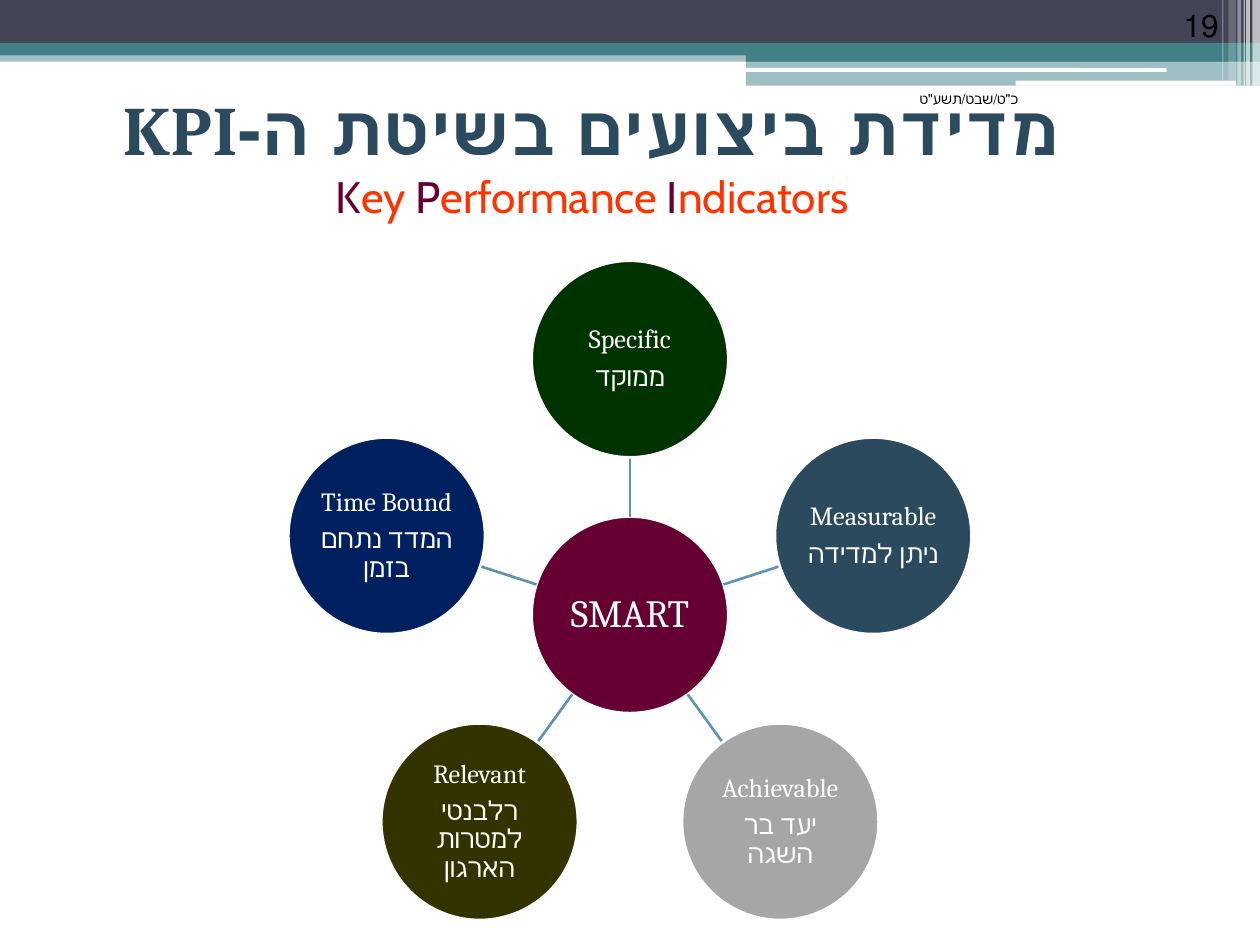
from dataclasses import dataclass
from math import cos, radians, sin

from lxml.etree import SubElement
from pptx import Presentation
from pptx.dml.color import RGBColor
from pptx.enum.shapes import MSO_CONNECTOR, MSO_SHAPE
from pptx.enum.text import MSO_ANCHOR, PP_ALIGN
from pptx.oxml.ns import qn
from pptx.util import Inches, Pt


@dataclass(frozen=True)
class Theme:
    dark: str = "424456"
    teal: str = "438086"
    white: str = "FFFFFF"
    black: str = "000000"
    slate: str = "2B4A5E"
    wine: str = "660033"
    red: str = "FF3300"
    spoke: str = "5C92B5"
    serif: str = "Cambria"
    sans: str = "Cabin"
    plain: str = "Arial"
    head: float = 39.6
    sub: float = 25.2
    hub: float = 22
    node: float = 15
    page: float = 18
    date: float = 8


T = Theme()

# left, top, width, height, colour, opacity in percent
BARS = [
    (0, 0.4, 10, 0.09, T.teal, 50),
    (0, 0, 10, 0.34, T.dark, 100),
    (0, 0.34, 10, 0.1, T.teal, 100),
    (5.92, 0.39, 4.08, 0.1, T.teal, 100),
    (5.92, 0.48, 4.08, 0.2, T.teal, 50),
]
PILLS = [(5.91, 0.54, 3.35, 0.03), (8.06, 0.64, 1.75, 0.04)]
# left, width, height, opacity in percent
STRIPES = [
    (9.94, 0.06, 0.68, 65),
    (9.89, 0.03, 0.68, 65),
    (9.87, 0.01, 0.68, 60),
    (9.82, 0.03, 0.68, 40),
    (9.75, 0.06, 0.64, 20),
    (9.7, 0.01, 0.64, 30),
]
# clockwise from the top
NODES = [
    ("Specific", "ממוקד", "003300"),
    ("Measurable", "ניתן למדידה", T.slate),
    ("Achievable", "יעד בר השגה", "A6A6A6"),
    ("Relevant", "רלבנטי למטרות הארגון", "333300"),
    ("Time Bound", "המדד נתחם בזמן", "002060"),
]


def rgb(code):
    return RGBColor.from_string(code)


def add_form(slide, kind, box, color, alpha=100):
    form = slide.shapes.add_shape(kind, *map(Inches, box))
    form.shadow.inherit = False
    form.fill.solid()
    form.fill.fore_color.rgb = rgb(color)
    form.line.fill.background()
    if alpha < 100:
        tone = form.fill._xPr.find(qn("a:solidFill"))[0]
        SubElement(tone, qn("a:alpha"), val=str(alpha * 1000))
    return form


def set_para(para, align):
    """Align a right-to-left paragraph."""
    para.alignment = align
    para._p.get_or_add_pPr().set("rtl", "1")


def add_run(para, text, size, font, color, bold=False):
    run = para.add_run()
    run.text = text
    run.font.size = Pt(size)
    run.font.name = font
    run.font.bold = bold
    run.font.color.rgb = rgb(color)
    return run


def add_text(slide, box, align, anchor):
    """Add a wrapping text box and return its first paragraph."""
    frame = slide.shapes.add_textbox(*map(Inches, box)).text_frame
    frame.word_wrap = True
    frame.vertical_anchor = anchor
    para = frame.paragraphs[0]
    set_para(para, align)
    return para


def draw_band(slide):
    for *box, color, alpha in BARS:
        add_form(slide, MSO_SHAPE.RECTANGLE, box, color, alpha)
    for box in PILLS:
        add_form(slide, MSO_SHAPE.ROUNDED_RECTANGLE, box, T.white)
    for left, width, height, alpha in STRIPES:
        box = (left, 0, width, height)
        add_form(slide, MSO_SHAPE.RECTANGLE, box, T.white, alpha)


def draw_title(slide, box):
    para = add_text(slide, box, PP_ALIGN.CENTER, MSO_ANCHOR.MIDDLE)
    head = add_run(para, "מדידת ביצועים בשיטת ה-KPI", T.head, T.serif, T.slate, True)
    head.font._element.set("spc", "50")
    para.add_line_break()
    for first, rest in (("K", "ey "), ("P", "erformance "), ("I", "ndicators")):
        add_run(para, first, T.sub, T.sans, T.wine)
        add_run(para, rest, T.sub, T.sans, T.red)


def draw_disc(slide, x, y, size, color, lines, points):
    box = (x - size / 2, y - size / 2, size, size)
    disc = add_form(slide, MSO_SHAPE.OVAL, box, color)
    disc.line.color.rgb = rgb(T.white)
    disc.line.width = Pt(1.5)
    frame = disc.text_frame
    frame.word_wrap = True
    frame.vertical_anchor = MSO_ANCHOR.MIDDLE
    frame.margin_left = frame.margin_right = Inches(0.01)
    frame.margin_top = frame.margin_bottom = Inches(0.01)
    for i, line in enumerate(lines):
        para = frame.add_paragraph() if i else frame.paragraphs[0]
        set_para(para, PP_ALIGN.CENTER)
        para.line_spacing = 0.9
        para.space_after = Pt(0.35 * points)
        add_run(para, line, points, T.serif, T.white)


def draw_spoke(slide, start, end):
    spoke = slide.shapes.add_connector(
        MSO_CONNECTOR.STRAIGHT, *map(Inches, start + end))
    spoke.line.color.rgb = rgb(T.spoke)
    spoke.line.width = Pt(1.5)
    SubElement(spoke._element.spPr, qn("a:effectLst"))


def draw_wheel(slide, x, y, reach, size):
    """Draw a hub at x, y with discs spaced evenly around it."""
    draw_disc(slide, x, y, size, T.wine, ["SMART"], T.hub)
    for i, (name, gloss, color) in enumerate(NODES):
        turn = radians(360 / len(NODES) * i - 90)

        def point(far):
            return x + far * cos(turn), y + far * sin(turn)

        draw_spoke(slide, point(size / 2), point(reach - size / 2))
        draw_disc(slide, *point(reach), size, color, [name, gloss], T.node)


def draw_marks(slide, date, page):
    para = add_text(slide, date, PP_ALIGN.LEFT, MSO_ANCHOR.TOP)
    add_run(para, 'כ"ט/שבט/תשע"ט', T.date, T.plain, T.black)
    para = add_text(slide, page, PP_ALIGN.RIGHT, MSO_ANCHOR.BOTTOM)
    add_run(para, "19", T.page, T.plain, T.black)


def main():
    deck = Presentation()
    deck.slide_width, deck.slide_height = Inches(10), Inches(7.5)
    slide = deck.slides.add_slide(deck.slide_layouts[6])
    draw_band(slide)
    draw_title(slide, (0.2, 0.64, 9, 1.17))
    draw_wheel(slide, 5, 4.88, 2.03, 1.56)
    draw_marks(slide, (7.2, 0.67, 1.05, 0.5), (8.94, 0, 0.83, 0.4))
    deck.save("out.pptx")


if __name__ == "__main__":
    main()
